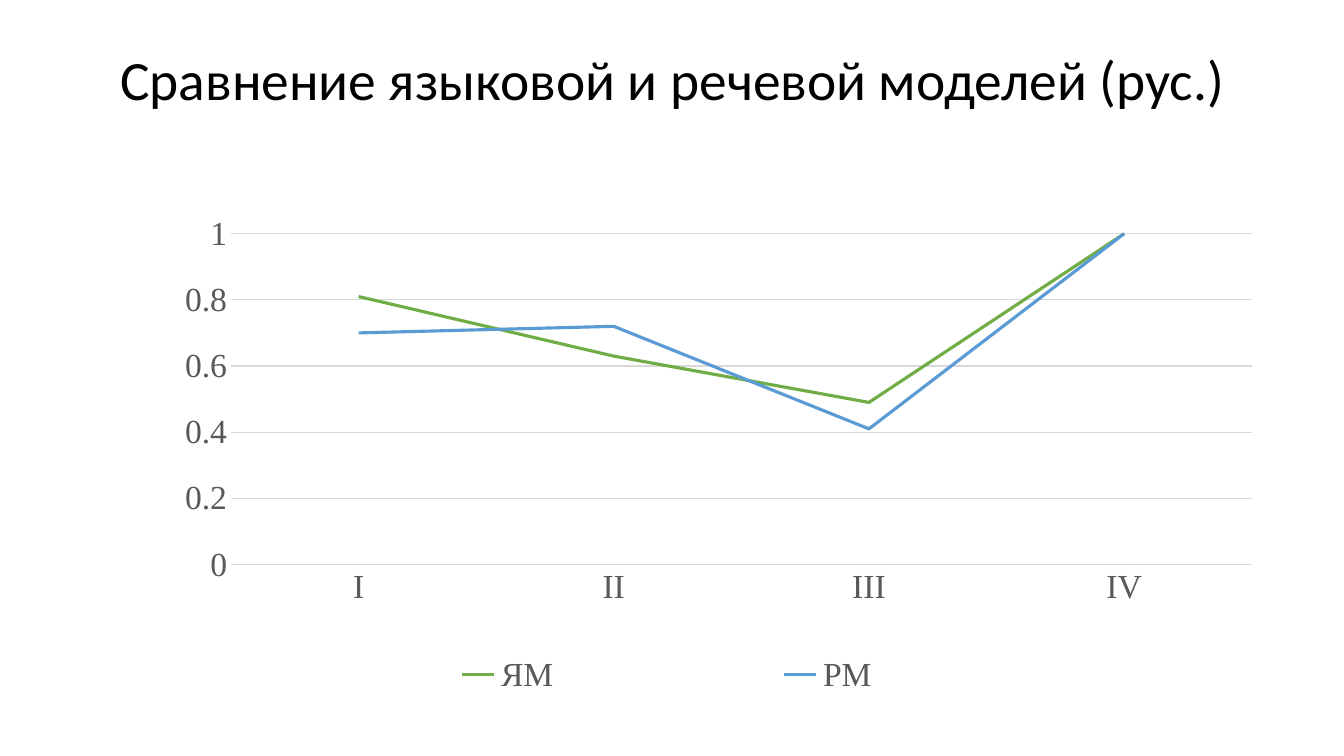
import pptx
import pptx.util
import pptx.chart.data
import pptx.dml.color
import pptx.enum.chart
import pptx.enum.text
import pptx.oxml
import pptx.oxml.ns

Pt = pptx.util.Pt
RGBColor = pptx.dml.color.RGBColor
BLACK = RGBColor(0x00, 0x00, 0x00)
GREY = RGBColor(0x59, 0x59, 0x59)
PALE = RGBColor(0xD9, 0xD9, 0xD9)
GREEN = RGBColor(0x70, 0xAD, 0x47)
BLUE = RGBColor(0x5B, 0x9B, 0xD5)

deck = pptx.Presentation()
deck.slide_width = pptx.util.Inches(13.33)
deck.slide_height = pptx.util.Inches(7.5)
slide = deck.slides.add_slide(deck.slide_layouts[6])


def place(*box):
    return [pptx.util.Inches(side) for side in box]


def layout(x, y, wide, high, inner=False):
    target = '<c:layoutTarget val="inner"/>' if inner else ""
    modes = "".join(f'<c:{edge}Mode val="edge"/>' for edge in "xy")
    sides = "".join(f'<c:{key} val="{val}"/>' for key, val in zip("xywh", (x, y, wide, high)))
    space = pptx.oxml.ns.nsdecls("c")
    return pptx.oxml.parse_xml(
        f"<c:layout {space}><c:manualLayout>{target}{modes}{sides}</c:manualLayout></c:layout>")


title = slide.shapes.add_textbox(*place(0.92, 0.4, 11.5, 1.45)).text_frame
title.word_wrap = True
title.vertical_anchor = pptx.enum.text.MSO_ANCHOR.TOP
title.margin_top = pptx.util.Inches(0.12)
line = title.paragraphs[0]
line.alignment = pptx.enum.text.PP_ALIGN.CENTER
line.line_spacing = 0.9
run = line.add_run()
run.text = "Сравнение языковой и речевой моделей (рус.)"
run.font.name = "Calibri"
run.font.size = Pt(39.6)
run.font.color.rgb = BLACK

models = [("ЯМ", (0.81, 0.63, 0.49, 1), GREEN), ("РМ", (0.7, 0.72, 0.41, 1), BLUE)]
data = pptx.chart.data.CategoryChartData()
data.categories = ["I", "II", "III", "IV"]
for name, vals, color in models:
    data.add_series(name, vals)

chart = slide.shapes.add_chart(
    pptx.enum.chart.XL_CHART_TYPE.LINE, *place(1.04, 1.85, 11.38, 5.21), data).chart
chart.has_title = False
chart.has_legend = True
legend = chart.legend
legend.position = pptx.enum.chart.XL_LEGEND_POSITION.BOTTOM
legend.include_in_layout = False

cats, scale = chart.category_axis, chart.value_axis
for font in (chart.font, cats.tick_labels.font, scale.tick_labels.font, legend.font):
    font.name = "Times New Roman"
    font.size = Pt(24)
    font.color.rgb = GREY

for axis in (cats, scale):
    axis.major_tick_mark = pptx.enum.chart.XL_TICK_MARK.NONE
    axis.minor_tick_mark = pptx.enum.chart.XL_TICK_MARK.NONE
scale.minimum_scale = 0
scale.maximum_scale = 1
scale.major_unit = 0.2
scale.tick_labels.number_format = "General"
scale.tick_labels.number_format_is_linked = False
scale.format.line.fill.background()
for rule in (cats.format.line, scale.major_gridlines.format.line):
    rule.color.rgb = PALE
    rule.width = Pt(0.75)

plot = chart.plots[0]
plot.vary_by_categories = False
for curve, (name, vals, color) in zip(plot.series, models):
    curve.smooth = False
    curve.marker.style = pptx.enum.chart.XL_MARKER_STYLE.NONE
    curve.format.line.color.rgb = color
    curve.format.line.width = Pt(2.25)

area = chart._chartSpace.chart.plotArea
for old in area.findall(pptx.oxml.ns.qn("c:layout")):
    area.remove(old)
area.insert(0, layout(0.11, 0.09, 0.89, 0.63, inner=True))
key = legend._element
for old in key.findall(pptx.oxml.ns.qn("c:layout")):
    key.remove(old)
key.find(pptx.oxml.ns.qn("c:legendPos")).addnext(layout(0.12, 0.88, 0.74, 0.1))

deck.save("out.pptx")
